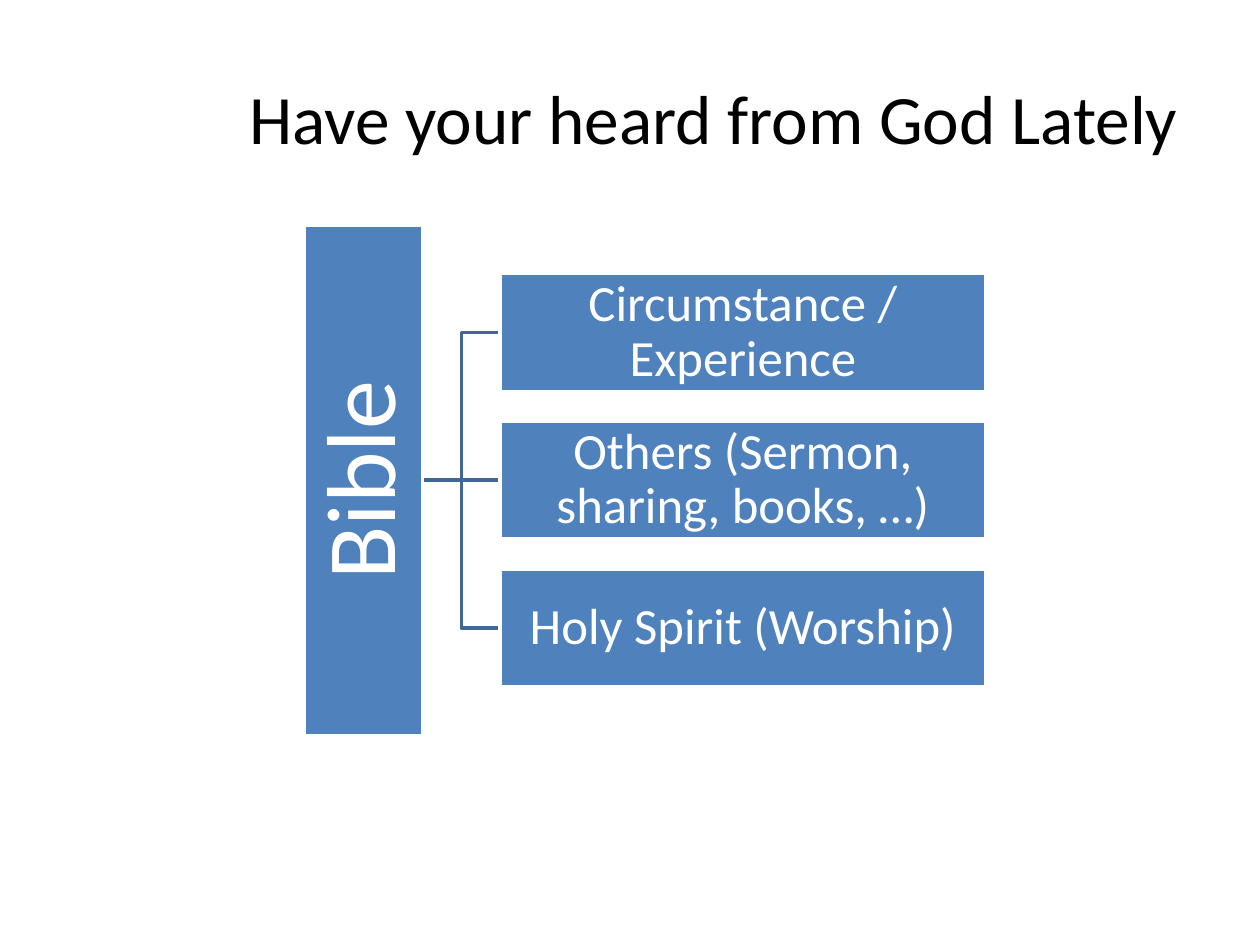
from lxml.etree import SubElement
from pptx import Presentation
from pptx.dml.color import RGBColor
from pptx.enum.shapes import MSO_CONNECTOR, MSO_SHAPE
from pptx.enum.text import MSO_ANCHOR, PP_ALIGN
from pptx.oxml.ns import qn
from pptx.util import Cm, Pt

TITLE = "Have your heard from God Lately"
ROOT = "Bible"
LEAVES = [
    "Circumstance / Experience",
    "Others (Sermon, sharing, books, …)",
    "Holy Spirit (Worship)",
]

THEME = {
    "font": "Calibri",
    "ink": RGBColor(0, 0, 0),
    "fill": RGBColor(0x4F, 0x81, 0xBD),
    "link": RGBColor(0x3F, 0x67, 0x97),
    "edge": RGBColor(255, 255, 255),
    "title": Pt(39.6),
    "root": Pt(56),
    "leaf": Pt(29),
    "line": Pt(2),
}

MID_X, MID_Y = 7.33, 9.68
BAR, THICK = 10.29, 2.38
LEAF_X, LEAF_W, STEP = 10.08, 9.8, 2.98


def write(frame, text, size, color):
    frame.text = text
    frame.word_wrap = True
    frame.vertical_anchor = MSO_ANCHOR.MIDDLE
    para = frame.paragraphs[0]
    para.alignment = PP_ALIGN.CENTER
    font = para.runs[0].font
    font.name, font.size = THEME["font"], size
    font.color.rgb = color
    return para


def add_box(shapes, text, size, left, top, width, inset):
    box = shapes.add_shape(
        MSO_SHAPE.RECTANGLE, Cm(left), Cm(top), Cm(width), Cm(THICK))
    box.shadow.inherit = False
    box.fill.solid()
    box.fill.fore_color.rgb = THEME["fill"]
    box.line.color.rgb = THEME["edge"]
    box.line.width = THEME["line"]
    frame = box.text_frame
    frame.margin_left = frame.margin_right = Cm(inset)
    frame.margin_top = frame.margin_bottom = Cm(inset)
    write(frame, text, size, THEME["edge"]).line_spacing = 0.9
    return box


def add_link(shapes, leaf, shift):
    kind = MSO_CONNECTOR.ELBOW if shift else MSO_CONNECTOR.STRAIGHT
    link = shapes.add_connector(
        kind, Cm(MID_X + THICK / 2), Cm(MID_Y), Cm(LEAF_X), Cm(MID_Y + shift))
    link.end_connect(leaf, 1)
    link.line.color.rgb = THEME["link"]
    link.line.width = THEME["line"]
    SubElement(link._element.spPr, qn("a:effectLst"))
    return link


def main():
    deck = Presentation()
    deck.slide_width, deck.slide_height = Cm(25.4), Cm(19.05)
    shapes = deck.slides.add_slide(deck.slide_layouts[5]).shapes

    title = shapes.title
    title.left, title.top = Cm(4.01), Cm(0.76)
    title.width, title.height = Cm(20.75), Cm(3.18)
    write(title.text_frame, TITLE, THEME["title"], THEME["ink"])

    top = MID_Y - THICK / 2
    root = add_box(
        shapes, ROOT, THEME["root"], MID_X - BAR / 2, top, BAR, 0.1)
    root.rotation = 270

    for i, text in enumerate(LEAVES):
        shift = (i - (len(LEAVES) - 1) / 2) * STEP
        leaf = add_box(
            shapes, text, THEME["leaf"], LEAF_X, top + shift, LEAF_W, 0.05)
        link = add_link(shapes, leaf, shift)
        root._element.addprevious(link._element)

    deck.save("out.pptx")


if __name__ == "__main__":
    main()
